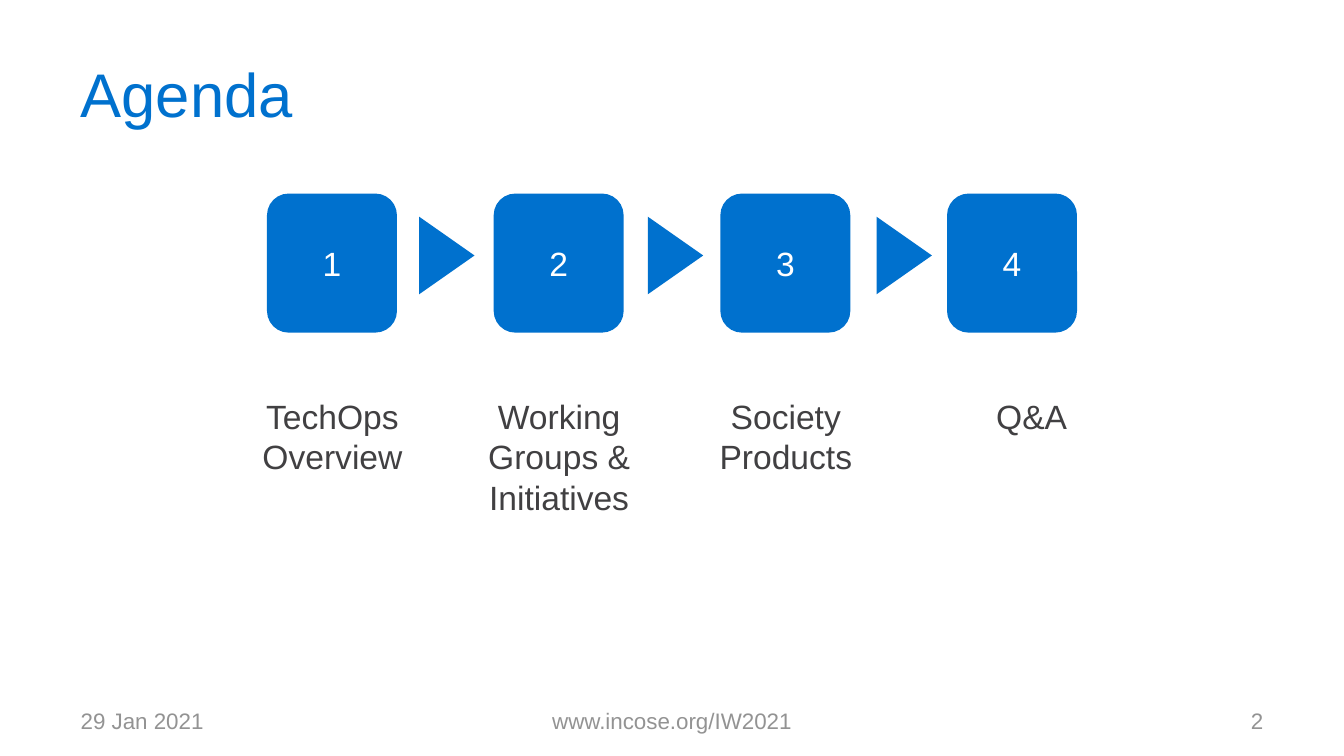
from pptx import Presentation
from pptx.dml.color import RGBColor
from pptx.enum.shapes import MSO_SHAPE
from pptx.enum.text import MSO_ANCHOR, PP_ALIGN
from pptx.util import Pt

PX = 9144  # EMU per px, 100 px to the inch
COLORS = {"blue": "0071CE", "white": "FFFFFF", "dark": "414042", "gray": "939393"}
STEP = 225

deck = Presentation()
deck.slide_width, deck.slide_height = 1334 * PX, 750 * PX
page = deck.slides.add_slide(deck.slide_layouts[6])


def write(box, text, size, color, align=PP_ALIGN.CENTER, anchor=MSO_ANCHOR.MIDDLE, inset=(10, 5)):
    """Fill a box with one paragraph; inset is (sides, top and bottom) in px."""
    frame = box.text_frame
    frame.word_wrap = True
    frame.vertical_anchor = anchor
    frame.margin_left = frame.margin_right = inset[0] * PX
    frame.margin_top = frame.margin_bottom = inset[1] * PX
    para = frame.paragraphs[0]
    para.text = text
    para.alignment = align
    para.font.name = "Arial"
    para.font.size = Pt(size)
    para.font.color.rgb = RGBColor.from_string(COLORS[color])


def add_blue_shape(kind, left, top, width, height):
    shape = page.shapes.add_shape(kind, left * PX, top * PX, width * PX, height * PX)
    shape.shadow.inherit = False
    shape.fill.solid()
    shape.fill.fore_color.rgb = RGBColor.from_string(COLORS["blue"])
    shape.line.fill.background()
    return shape


# Title and footer: text, left, top, width, height, size, color, alignment
frame_texts = [
    ("Agenda", 67, 30, 1201, 125, 44, "blue", PP_ALIGN.LEFT),
    ("29 Jan 2021", 67, 695, 311, 40, 16, "gray", PP_ALIGN.LEFT),
    ("www.incose.org/IW2021", 456, 695, 422, 40, 16, "gray", PP_ALIGN.CENTER),
    ("2", 956, 695, 311, 40, 16, "gray", PP_ALIGN.RIGHT),
]
for text, left, top, width, height, size, color, align in frame_texts:
    box = page.shapes.add_textbox(left * PX, top * PX, width * PX, height * PX)
    write(box, text, size, color, align, inset=(13, 7))

# Agenda steps: label and label width
agenda = [
    ("TechOps Overview", 210),
    ("Working Groups & Initiatives", 210),
    ("Society Products", 210),
    ("Q&A", 248),
]
for index, (label, label_width) in enumerate(agenda):
    tile = add_blue_shape(MSO_SHAPE.ROUNDED_RECTANGLE, 265 + STEP * index, 192, 129, 138)
    write(tile, str(index + 1), 24, "white")

    if index < len(agenda) - 1:
        arrow = add_blue_shape(MSO_SHAPE.ISOSCELES_TRIANGLE, 405 + 227 * index, 226, 77, 55)
        arrow.rotation = 90

    caption = page.shapes.add_textbox((225 + STEP * index) * PX, 388 * PX, label_width * PX, 130 * PX)
    write(caption, label, 24, "dark", anchor=MSO_ANCHOR.TOP)

deck.save("out.pptx")
